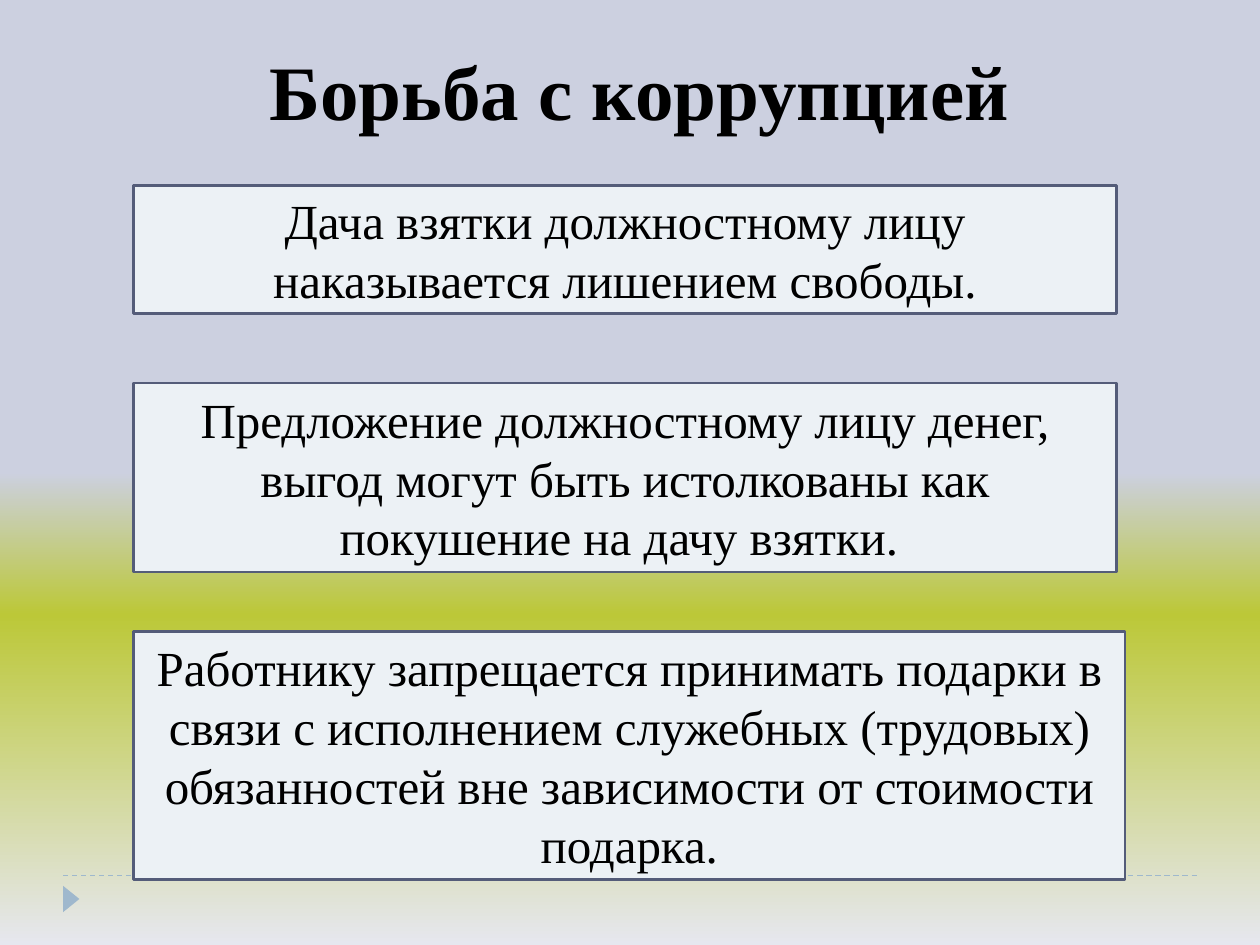
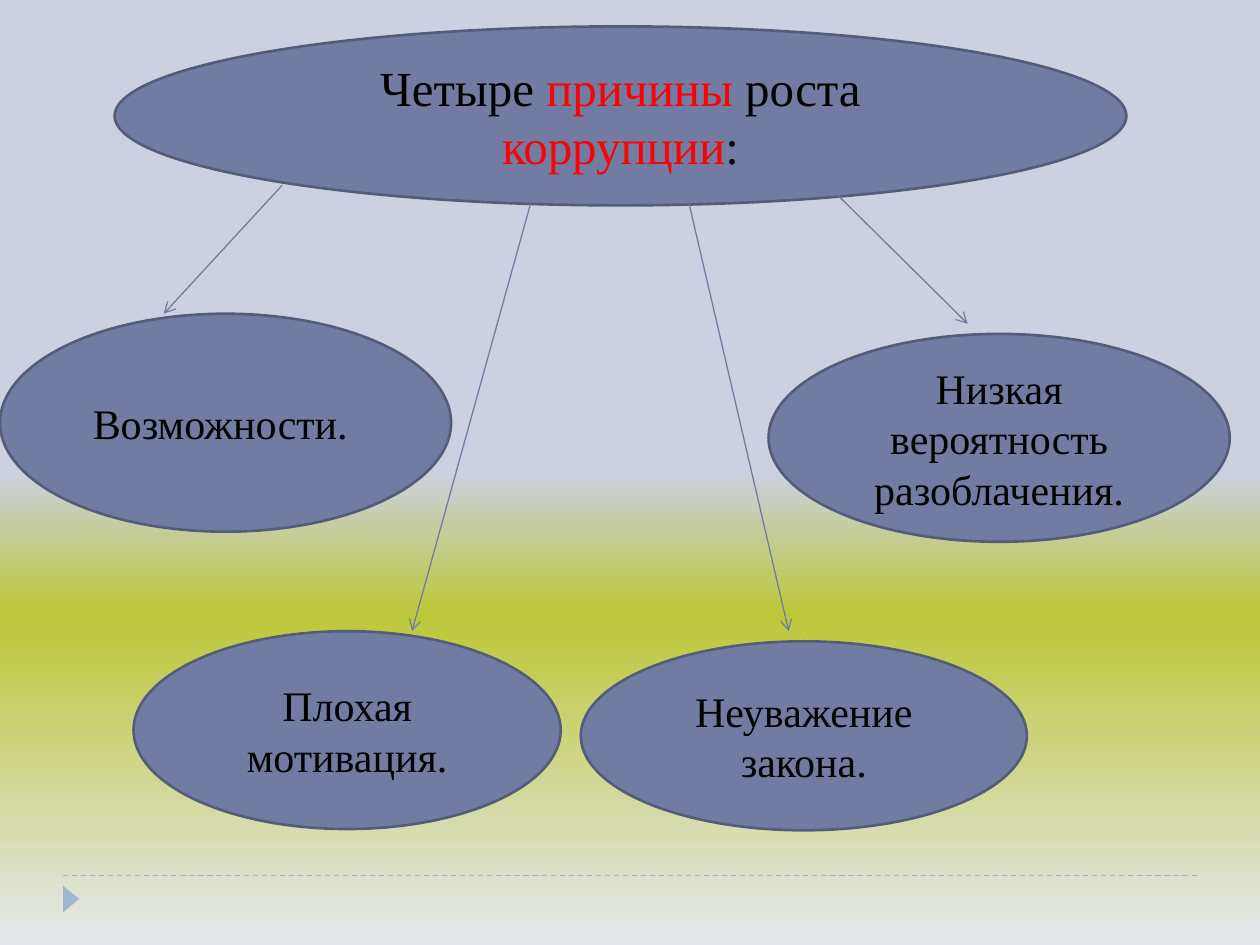
"""Two slides on fighting corruption, laid out on a grid of 100 columns by 75 rows."""
from copy import deepcopy

from lxml import etree
from pptx import Presentation
from pptx import util as u
from pptx.dml.color import RGBColor
from pptx.enum import dml, shapes, text
from pptx.oxml.ns import qn

FONT = "Times New Roman"
BLACK = RGBColor(0x00, 0x00, 0x00)
RED = RGBColor(0xFF, 0x00, 0x00)
SLATE = RGBColor(0x72, 0x7C, 0xA3)
OUTLINE = RGBColor(0x54, 0x5C, 0x79)
PALE = RGBColor(0xEC, 0xF1, 0xF5)
FOOTER = RGBColor(0x9F, 0xB8, 0xCD)
SKY = ((0.5, RGBColor(0xCC, 0xD0, 0xE0)),
       (0.65, RGBColor(0xBC, 0xC8, 0x38)),
       (1.0, RGBColor(0xE6, 0xE7, 0xEF)))

WIDTH, HEIGHT = u.Inches(10), u.Inches(7.5)
COLUMNS, ROWS = 100, 75

RULES = (
    ((10.6, 14.7, 78, 10.2), "Дача взятки должностному лицу наказывается лишением свободы."),
    ((10.6, 30.4, 78, 15), "Предложение должностному лицу денег, выгод могут быть "
                           "истолкованы как покушение на дачу взятки. "),
    ((10.6, 50.1, 78.7, 19.7), "Работнику запрещается принимать подарки в связи с исполнением "
                               "служебных (трудовых) обязанностей вне зависимости от "
                               "стоимости подарка."),
)
HEADING = (("Четыре ", BLACK), ("причины", RED), (" роста ", BLACK),
           ("коррупции", RED), (":", BLACK))
REASONS = (
    ("Возможности. ", (0, 24.9, 35.8, 17.3), (22.4, 14.7, 13, 24.9)),
    ("Низкая вероятность разоблачения.", (61, 26.5, 36.6, 16.5), (66.5, 15.5, 76.8, 25.7)),
    ("Плохая мотивация.", (10.6, 50.1, 33.9, 15.7), (42.1, 16.2, 32.7, 50.1)),
    ("Неуважение закона.", (46.1, 50.9, 35.4, 15), (54.7, 16.2, 62.6, 50.1)),
)


def grid(*cells):
    """Turn alternating column and row counts into lengths."""
    sizes = (WIDTH / COLUMNS, HEIGHT / ROWS)
    return [u.Emu(round(c * sizes[i % 2])) for i, c in enumerate(cells)]


def write(tf, runs, size, bold=False):
    """Fill a text frame with one centred paragraph of coloured runs."""
    tf.word_wrap = True
    tf.vertical_anchor = text.MSO_ANCHOR.MIDDLE
    p = tf.paragraphs[0]
    p.alignment = text.PP_ALIGN.CENTER
    p.font.name, p.font.size, p.font.bold = FONT, u.Pt(size), bold
    for words, color in runs:
        r = p.add_run()
        r.text = words
        r.font.color.rgb = color


def add_block(s, kind, at, fill, runs, size):
    """Add an outlined preset shape with text."""
    sp = s.shapes.add_shape(kind, *grid(*at))
    sp.shadow.inherit = False
    sp.fill.solid()
    sp.fill.fore_color.rgb = fill
    sp.line.color.rgb = OUTLINE
    sp.line.width = u.Pt(1.5)
    write(sp.text_frame, runs, size)


def add_line(s, ends, color):
    """Add a thin straight line without shadow."""
    line = s.shapes.add_connector(shapes.MSO_CONNECTOR.STRAIGHT, *grid(*ends))
    line.line.color.rgb = color
    line.line.width = u.Pt(0.75)
    etree.SubElement(line.element.spPr, qn("a:effectLst"))
    return line


def add_arrow(s, ends):
    """Add a line with an open arrowhead at its end."""
    arrow = add_line(s, ends, SLATE)
    etree.SubElement(arrow.line._get_or_add_ln(), qn("a:tailEnd"), type="arrow")


def paint_background(master):
    """Give the master a vertical gradient of three stops."""
    fill = master.background.fill
    fill.gradient()
    fill.gradient_angle = 270
    stops = master.element.find(".//" + qn("a:gsLst"))
    stops.append(deepcopy(stops[0]))
    for stop, (position, color) in zip(fill.gradient_stops, SKY):
        stop.position = position
        stop.color.rgb = color


def move_footer_to_master(s, master):
    """Draw the dashed rule and its marker and place them on the master."""
    rule = add_line(s, (5, 69.5, 95, 69.5), FOOTER)
    rule.line.dash_style = dml.MSO_LINE.DASH
    marker = s.shapes.add_shape(shapes.MSO_SHAPE.ISOSCELES_TRIANGLE,
                                *grid(4.6, 70.7, 2.1, 1.3))
    marker.rotation = 90
    marker.shadow.inherit = False
    marker.fill.solid()
    marker.fill.fore_color.rgb = FOOTER
    marker.line.fill.background()
    for number, sp in enumerate((rule, marker), 101):
        sp.element.xpath(".//p:cNvPr")[0].set("id", str(number))
        master.shapes.element.append(sp.element)


def build_rules(s):
    """Fill the slide with a title and three stacked rules."""
    title = s.shapes.title
    title.left, title.top, title.width, title.height = grid(9.8, 2.9, 81.9, 8.4)
    write(title.text_frame, [("Борьба с коррупцией", BLACK)], 44, bold=True)
    title.text_frame.auto_size = text.MSO_AUTO_SIZE.SHAPE_TO_FIT_TEXT
    for at, words in RULES:
        add_block(s, shapes.MSO_SHAPE.RECTANGLE, at, PALE, [(words, BLACK)], 28)


def build_reasons(s):
    """Fill the slide with a heading oval and arrows to four reasons."""
    oval = shapes.MSO_SHAPE.OVAL
    add_block(s, oval, (9.1, 2.1, 80.3, 14.2), SLATE, HEADING, 28)
    for words, at, ends in REASONS:
        add_arrow(s, ends)
        add_block(s, oval, at, SLATE, [(words, BLACK)], 24)


def main():
    """Build and save the presentation."""
    prs = Presentation()
    prs.slide_width, prs.slide_height = WIDTH, HEIGHT
    title_only, blank = prs.slide_layouts[5], prs.slide_layouts[6]
    rules = prs.slides.add_slide(title_only)
    paint_background(prs.slide_master)
    move_footer_to_master(rules, prs.slide_master)
    build_rules(rules)
    build_reasons(prs.slides.add_slide(blank))
    prs.save("out.pptx")


if __name__ == "__main__":
    main()
